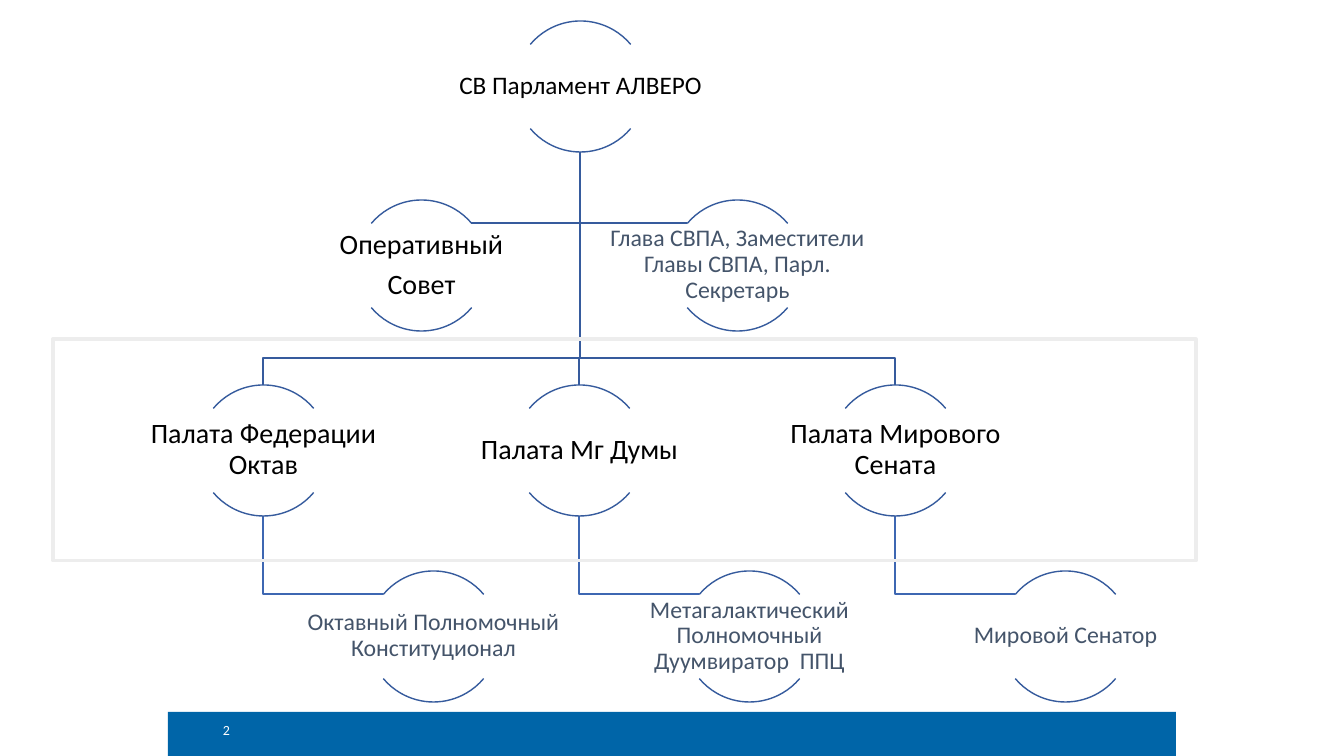
import dataclasses

import pptx
import pptx.dml.color
import pptx.enum.shapes
import pptx.enum.text
import pptx.util

EMU_PER_PX = 914400 / 100.8
CIRCLE = 131
LABEL_WIDTH = 261
LABEL_HEIGHT = 84
LABEL_DROP = 23
ARC_HALF = 50
ROOT_X, ROOT_TOP = 580, 21
COUNCIL_TOP, CHAMBER_TOP, MEMBER_TOP = 200, 385, 571
CHAMBER_X = 263
COLUMN_STEP = 316
MEMBER_SHIFT = 170
BRANCH_Y = 358
BLUE, LINK_BLUE, BLACK, SLATE = "365B9D", "3E67B2", "000000", "44546A"


@dataclasses.dataclass
class Node:
    paragraphs: list[str]
    center: int
    top: int
    size: int
    color: str = BLACK


def px(length: int) -> pptx.util.Emu:
    return pptx.util.Emu(round(length * EMU_PER_PX))


def rgb(color: str) -> pptx.dml.color.RGBColor:
    return pptx.dml.color.RGBColor.from_string(color)


def add_outline(shape, color: str, width: float = 1) -> None:
    shape.shadow.inherit = False
    shape.fill.background()
    shape.line.color.rgb = rgb(color)
    shape.line.width = pptx.util.Pt(width)


def add_text(slide, paragraphs: list[str], left: int, top: int, width: int,
             height: int, *, size: int, color: str, spacing: float = 0.9,
             before: int = 0, after: float = 0, inset: int = 1,
             wrap: bool = True,
             anchor=pptx.enum.text.MSO_ANCHOR.MIDDLE) -> None:
    box = slide.shapes.add_textbox(px(left), px(top), px(width), px(height))
    frame = box.text_frame
    frame.word_wrap = wrap
    frame.vertical_anchor = anchor
    frame.margin_left = frame.margin_right = px(inset)
    frame.margin_top = frame.margin_bottom = px(min(inset, 5))
    for index, text in enumerate(paragraphs):
        para = frame.add_paragraph() if index else frame.paragraphs[0]
        para.alignment = pptx.enum.text.PP_ALIGN.CENTER
        para.line_spacing = spacing
        para.space_before = pptx.util.Pt(before)
        para.space_after = pptx.util.Pt(after)
        span = para.add_run()
        span.text = text
        span.font.name = "Calibri"
        span.font.size = pptx.util.Pt(size)
        span.font.color.rgb = rgb(color)


def add_rectangle(slide, left: int, top: int, width: int, height: int):
    return slide.shapes.add_shape(
        pptx.enum.shapes.MSO_SHAPE.RECTANGLE,
        px(left), px(top), px(width), px(height))


def add_link(slide, points: list[tuple[int, int]], color: str = BLUE) -> None:
    corners = [(px(x), px(y)) for x, y in points]
    builder = slide.shapes.build_freeform(*corners[0])
    builder.add_line_segments(corners[1:], close=False)
    add_outline(builder.convert_to_shape(), color)


def add_node(slide, node: Node) -> None:
    for start, end in ((132, 192), (24, 84)):
        arc = slide.shapes.add_shape(
            pptx.enum.shapes.MSO_SHAPE.ARC,
            px(node.center - CIRCLE // 2), px(node.top), px(CIRCLE), px(CIRCLE))
        arc.adjustments[0] = start
        arc.adjustments[1] = end
        add_outline(arc, BLUE)
    add_text(slide, node.paragraphs, node.center - LABEL_WIDTH // 2,
             node.top + LABEL_DROP, LABEL_WIDTH, LABEL_HEIGHT,
             size=node.size, color=node.color, after=node.size * 0.35)


def add_footer(slide) -> None:
    band = add_rectangle(slide, 168, 712, 1008, 44)
    band.shadow.inherit = False
    band.fill.solid()
    band.fill.fore_color.rgb = rgb("0065A8")
    band.line.fill.background()
    add_text(slide, ["2"], 213, 729, 27, 22, size=10, color="FFFFFF",
             spacing=0.3, before=10, inset=10, wrap=False,
             anchor=pptx.enum.text.MSO_ANCHOR.TOP)


def main() -> None:
    deck = pptx.Presentation()
    deck.slide_width, deck.slide_height = px(1344), px(756)
    page = deck.slides.add_slide(deck.slide_layouts[6])
    add_footer(page)

    root = Node(["СВ Парламент АЛВЕРО"], ROOT_X, ROOT_TOP, 18)
    councils = [
        Node(["Оперативный", "Совет"], 421, COUNCIL_TOP, 20),
        Node(["Глава СВПА, Заместители Главы СВПА, Парл. Секретарь"],
             737, COUNCIL_TOP, 17, SLATE),
    ]
    branches = [
        ("Палата Федерации Октав", "Октавный Полномочный Конституционал"),
        ("Палата Мг Думы", "Метагалактический Полномочный Дуумвиратор  ППЦ"),
        ("Палата Мирового Сената", "Мировой Сенатор"),
    ]
    nodes = [root, *councils]
    root_bottom = ROOT_TOP + CIRCLE

    for council in councils:
        side = 1 if council.center < ROOT_X else -1
        link_y = COUNCIL_TOP + LABEL_DROP
        add_link(page, [(ROOT_X, root_bottom), (ROOT_X, link_y),
                        (council.center + side * ARC_HALF, link_y)])

    for column, (chamber, member) in enumerate(branches):
        center = CHAMBER_X + column * COLUMN_STEP
        member_center = center + MEMBER_SHIFT
        link_y = MEMBER_TOP + LABEL_DROP
        add_link(page, [(ROOT_X, root_bottom), (ROOT_X, BRANCH_Y),
                        (center, BRANCH_Y), (center, CHAMBER_TOP)])
        add_link(page, [(center, CHAMBER_TOP + CIRCLE), (center, link_y),
                        (member_center - ARC_HALF, link_y)], LINK_BLUE)
        nodes += [Node([chamber], center, CHAMBER_TOP, 20),
                  Node([member], member_center, MEMBER_TOP, 17, SLATE)]

    for node in nodes:
        add_node(page, node)

    add_outline(add_rectangle(page, 53, 339, 1143, 222), "EDEDED", 2.25)
    deck.save("out.pptx")


if __name__ == "__main__":
    main()
